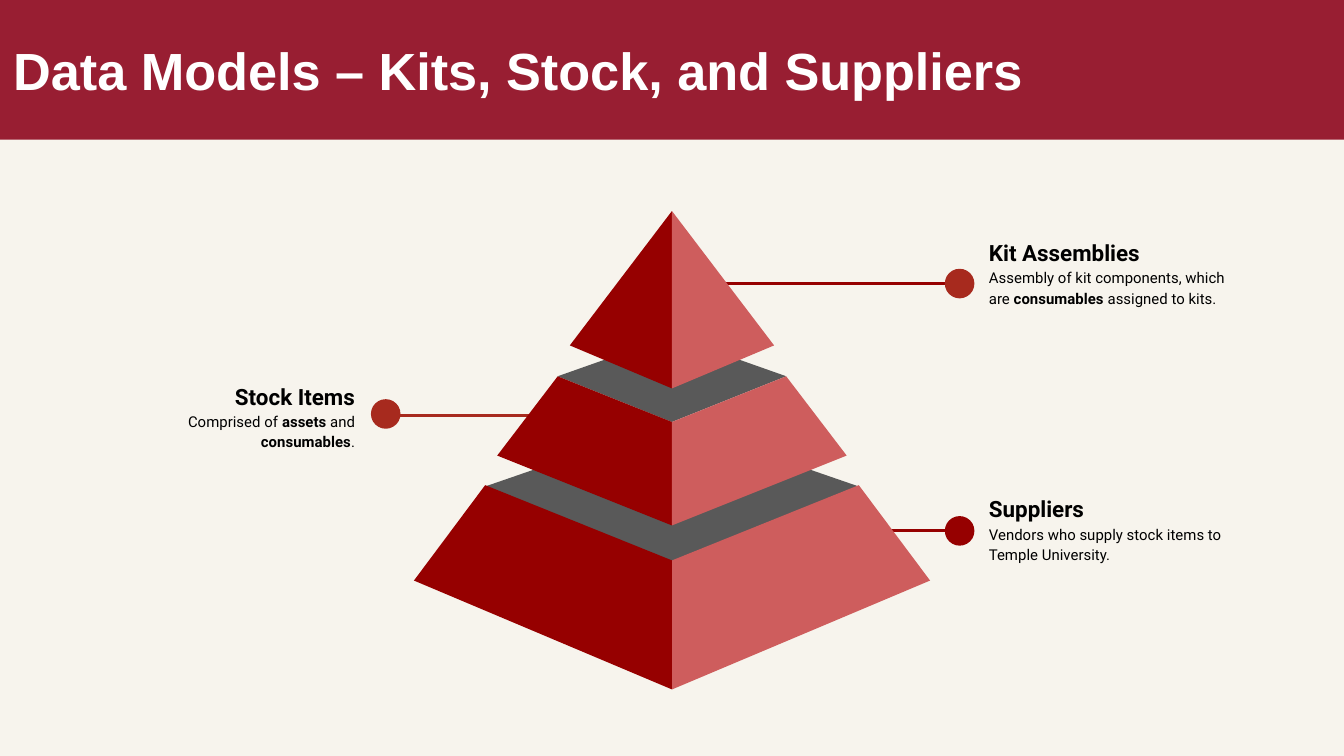
from lxml.etree import SubElement
from pptx import Presentation
from pptx.dml.color import RGBColor
from pptx.enum.shapes import MSO_CONNECTOR, MSO_SHAPE
from pptx.enum.text import MSO_ANCHOR, PP_ALIGN
from pptx.oxml.ns import qn
from pptx.util import Inches, Pt

CREAM = RGBColor(0xF7, 0xF4, 0xED)
CRIMSON = RGBColor(0x98, 0x1E, 0x32)
DARK_RED = RGBColor(0x96, 0x00, 0x00)
BRICK = RGBColor(0xA7, 0x2A, 0x1E)
ROSE = RGBColor(0xCE, 0x5D, 0x5D)
GREY = RGBColor(0x59, 0x59, 0x59)
WHITE = RGBColor(0xFF, 0xFF, 0xFF)
BLACK = RGBColor(0x00, 0x00, 0x00)

SLIDE_WIDTH = 10
SLIDE_HEIGHT = SLIDE_WIDTH * 9 / 16
CENTER_X = SLIDE_WIDTH / 2
DOT_SIZE = 0.22
TITLE_FONT = {"name": "Arial", "size": Pt(28), "bold": True}
HEADING_FONT = {"name": "Roboto", "size": Pt(12), "bold": True}
BODY_FONT = {"name": "Roboto", "size": Pt(8), "bold": False}
STRONG_FONT = BODY_FONT | {"bold": True}
FRAME = {
    "word_wrap": True,
    "vertical_anchor": MSO_ANCHOR.MIDDLE,
    "margin_left": Inches(0.1),
    "margin_right": Inches(0.1),
    "margin_top": Inches(0.1),
    "margin_bottom": Inches(0.1),
}

TIERS = [
    {"top": [(1.39, 3.62), (0, 3.14), (0, 4.18)],
     "face": [(1.39, 3.61), (1.92, 4.32), (0, 5.13), (0, 4.17)]},
    {"top": [(0.85, 2.8), (0, 2.5), (0, 3.14)],
     "face": [(0.85, 2.8), (1.3, 3.39), (0, 3.91), (0, 3.14)]},
    {"face": [(0, 1.57), (0.76, 2.57), (0, 2.89)]},
]

CALLOUTS = [
    {"heading": "Suppliers",
     "body": [("Vendors who supply stock items to Temple University.", BODY_FONT)],
     "box": (7.26, 3.17), "align": PP_ALIGN.LEFT,
     "line": (6.6, 7.24, 3.95), "line_color": DARK_RED,
     "dot": (7.03, 3.84), "dot_color": DARK_RED},
    {"heading": "Stock Items",
     "body": [("Comprised of ", BODY_FONT), ("assets", STRONG_FONT),
              (" and ", BODY_FONT), ("consumables", STRONG_FONT),
              (".", BODY_FONT)],
     "box": (0.7, 2.33), "align": PP_ALIGN.RIGHT,
     "line": (3.97, 2.83, 3.09), "line_color": BRICK,
     "dot": (2.76, 2.97), "dot_color": BRICK},
    {"heading": "Kit Assemblies",
     "body": [("Assembly of kit components, which are ", BODY_FONT),
              ("consumables ", STRONG_FONT), ("assigned to kits.", BODY_FONT)],
     "box": (7.26, 1.34), "align": PP_ALIGN.LEFT, "bottom": 0.25,
     "line": (5.37, 7.24, 2.11), "line_color": DARK_RED,
     "dot": (7.03, 2), "dot_color": BRICK},
]


def set_attributes(target, values):
    for name, value in values.items():
        setattr(target, name, value)


def paint(sp, color):
    sp.shadow.inherit = False
    sp.fill.solid()
    sp.fill.fore_color.rgb = color
    sp.line.fill.background()


def add_run(p, text, font, color=BLACK):
    r = p.add_run()
    r.text = text
    set_attributes(r.font, font)
    r.font.color.rgb = color


def add_title(s, text):
    sp = s.shapes.add_shape(
        MSO_SHAPE.RECTANGLE, 0, 0, Inches(SLIDE_WIDTH), Inches(1.04))
    paint(sp, CRIMSON)
    set_attributes(sp.text_frame, FRAME)
    p = sp.text_frame.paragraphs[0]
    p.alignment = PP_ALIGN.LEFT
    add_run(p, text, TITLE_FONT, WHITE)


def add_leader(s, x1, x2, y, color):
    line = s.shapes.add_connector(
        MSO_CONNECTOR.STRAIGHT, Inches(x1), Inches(y), Inches(x2), Inches(y))
    line.line.color.rgb = color
    line.line.width = Pt(1.5)
    SubElement(line._element.spPr, qn("a:effectLst"))


def add_callout_text(s, callout):
    left, top = callout["box"]
    tf = s.shapes.add_textbox(
        Inches(left), Inches(top), Inches(2.04), Inches(1.51)).text_frame
    set_attributes(tf, FRAME)
    tf.margin_bottom = Inches(callout.get("bottom", 0.1))
    heading, body = tf.paragraphs[0], tf.add_paragraph()
    for p in (heading, body):
        set_attributes(p, {"alignment": callout["align"], "line_spacing": 1.15})
    body.space_after = Pt(16)
    add_run(heading, callout["heading"], HEADING_FONT)
    for text, font in callout["body"]:
        add_run(body, text, font)


def add_callout(s, callout):
    add_leader(s, *callout["line"], callout["line_color"])
    add_callout_text(s, callout)
    left, top = callout["dot"]
    dot = s.shapes.add_shape(
        MSO_SHAPE.OVAL, Inches(left), Inches(top), Inches(DOT_SIZE), Inches(DOT_SIZE))
    paint(dot, callout["dot_color"])


def add_polygon(s, points, color):
    start, *rest = [(Inches(x), Inches(y)) for x, y in points]
    builder = s.shapes.build_freeform(*start)
    builder.add_line_segments(rest, close=True)
    paint(builder.convert_to_shape(), color)


def add_tier(s, tier):
    if "top" in tier:
        (dx, y), back, front = tier["top"]
        corners = [(-dx, y), front, (dx, y), back]
        add_polygon(s, [(CENTER_X + x, y) for x, y in corners], GREY)
    for side, color in ((-1, DARK_RED), (1, ROSE)):
        add_polygon(s, [(CENTER_X + side * x, y) for x, y in tier["face"]], color)


def main():
    """Build the data model pyramid slide."""
    prs = Presentation()
    prs.slide_width, prs.slide_height = Inches(SLIDE_WIDTH), Inches(SLIDE_HEIGHT)
    s = prs.slides.add_slide(prs.slide_layouts[6])
    s.background.fill.solid()
    s.background.fill.fore_color.rgb = CREAM
    add_title(s, "Data Models – Kits, Stock, and Suppliers")
    for callout in CALLOUTS:
        add_callout(s, callout)
    for tier in TIERS:
        add_tier(s, tier)
    prs.save("out.pptx")


if __name__ == "__main__":
    main()
